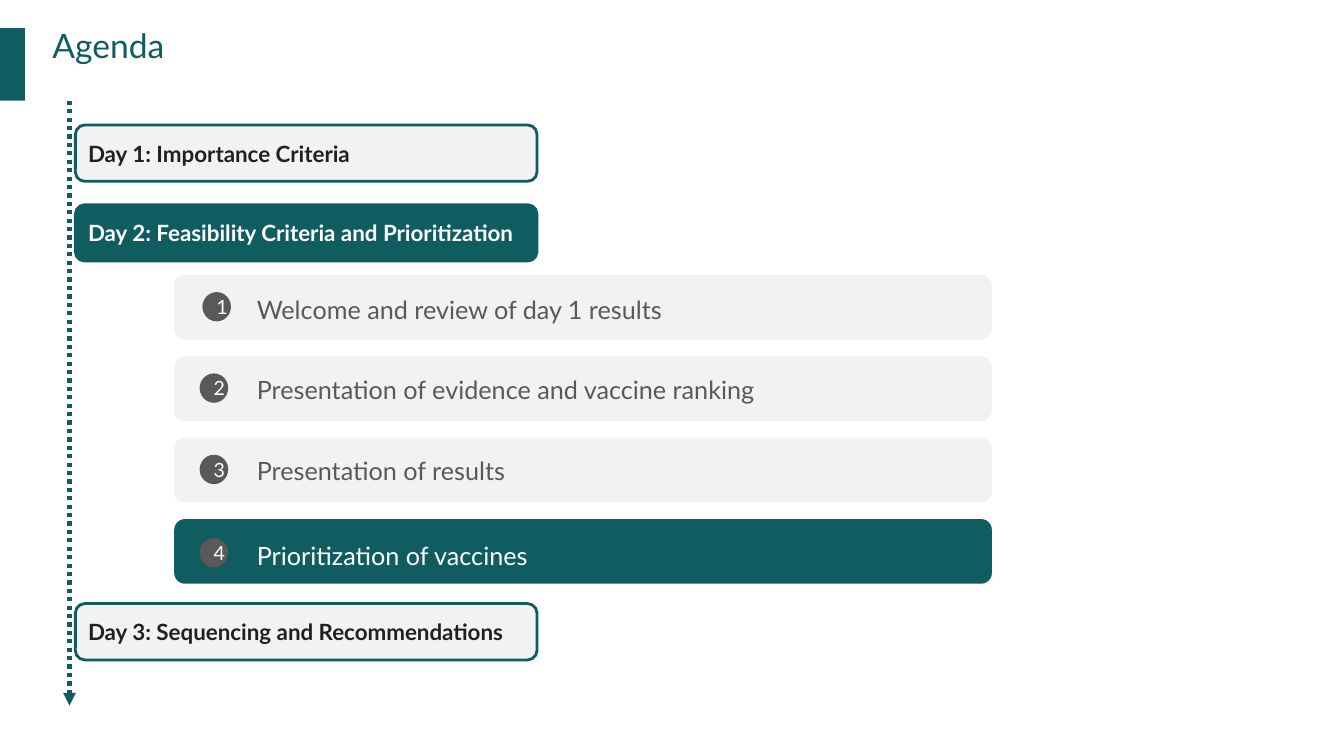
from dataclasses import dataclass

from lxml.etree import SubElement
from pptx import Presentation
from pptx.dml.color import RGBColor
from pptx.enum.dml import MSO_LINE
from pptx.enum.shapes import MSO_CONNECTOR, MSO_SHAPE
from pptx.enum.text import MSO_ANCHOR, MSO_AUTO_SIZE, PP_ALIGN
from pptx.oxml.ns import qn
from pptx.util import Cm, Pt


@dataclass(frozen=True)
class Theme:
    font: str = "Lato"
    teal: str = "0F5D61"
    pale: str = "F2F2F2"
    gray: str = "595959"
    dark: str = "202020"
    white: str = "FFFFFF"
    title_size: int = 24
    topic_size: int = 18
    day_size: int = 16
    badge_size: int = 14
    outline: int = 2
    timeline: int = 3


@dataclass(frozen=True)
class Box:
    left: float
    top: float
    width: float
    height: float

    def inside(self, left, top, width, height):
        return Box(self.left + left, self.top + top, width, height)

    def lengths(self):
        return Cm(self.left), Cm(self.top), Cm(self.width), Cm(self.height)


@dataclass(frozen=True)
class Topic:
    text: str
    badge_left: float = 0.64
    badge_top: float = 0.43
    label_top: float = 0.33
    active: bool = False


THEME = Theme()
PAGE = Box(0, 0, 33.86, 19.05)
DAY_AREA = Box(1.9, 3.15, 11.63, 1.42)
TOPIC_AREA = Box(4.39, 6.93, 20.6, 1.63)
TOPIC_PITCH = 2.05

DAYS = [
    ("Day 1: Importance Criteria", 0, False),
    ("Day 2: Feasibility Criteria and Prioritization", 2.01, True),
    ("Day 3: Sequencing and Recommendations", 12.06, False),
]
TOPICS = [
    Topic("Welcome and review of day 1 results", badge_left=0.71, label_top=0.36),
    Topic("Presentation of evidence and vaccine ranking"),
    Topic("Presentation of results"),
    Topic("Prioritization of vaccines", badge_top=0.48, label_top=0.41, active=True),
]


def write(shape, text, size, color, bold=False, align=PP_ALIGN.LEFT,
          anchor=MSO_ANCHOR.TOP, inset=None):
    frame = shape.text_frame
    frame.word_wrap = True
    frame.vertical_anchor = anchor
    if inset is not None:
        frame.margin_left = frame.margin_right = Cm(inset)
        frame.margin_top = frame.margin_bottom = Cm(inset)
    para = frame.paragraphs[0]
    para.alignment = align
    span = para.add_run()
    span.text = text
    span.font.name = THEME.font
    span.font.size = Pt(size)
    span.font.bold = bold
    span.font.color.rgb = RGBColor.from_string(color)


def add_panel(shapes, kind, box, fill, line=None):
    panel = shapes.add_shape(kind, *box.lengths())
    panel.shadow.inherit = False
    panel.fill.solid()
    panel.fill.fore_color.rgb = RGBColor.from_string(fill)
    if line:
        panel.line.color.rgb = RGBColor.from_string(line)
        panel.line.width = Pt(THEME.outline)
    else:
        panel.line.fill.background()
    return panel


def draw_header(page, box):
    add_panel(page.shapes, MSO_SHAPE.RECTANGLE,
              box.inside(-0.03, 0.71, 0.66, 1.83), THEME.teal)
    title = page.shapes.add_textbox(*box.inside(1.32, 0.64, 31.88, 2.03).lengths())
    write(title, "Agenda", THEME.title_size, THEME.teal, inset=0)


def draw_timeline(page, box):
    left, top = Cm(box.left), Cm(box.top)
    arrow = page.shapes.add_connector(
        MSO_CONNECTOR.STRAIGHT, left, top, left, top + Cm(box.height))
    arrow.line.color.rgb = RGBColor.from_string(THEME.teal)
    arrow.line.width = Pt(THEME.timeline)
    arrow.line.dash_style = MSO_LINE.ROUND_DOT
    properties = arrow.line._get_or_add_ln()
    SubElement(properties, qn("a:tailEnd"), type="triangle")
    SubElement(properties.getparent(), qn("a:effectLst"))


def draw_day(page, box, text, active):
    fill, color = (THEME.teal, THEME.white) if active else (THEME.pale, THEME.dark)
    panel = add_panel(page.shapes, MSO_SHAPE.ROUNDED_RECTANGLE, box, fill, THEME.teal)
    write(panel, text, THEME.day_size, color, bold=True, anchor=MSO_ANCHOR.MIDDLE)


def draw_topic(page, box, number, topic):
    fill, color = (THEME.teal, THEME.white) if topic.active else (THEME.pale, THEME.gray)
    group = page.shapes.add_group_shape()
    add_panel(group.shapes, MSO_SHAPE.ROUNDED_RECTANGLE, box, fill)
    badge = add_panel(group.shapes, MSO_SHAPE.OVAL,
                      box.inside(topic.badge_left, topic.badge_top, 0.72, 0.74), THEME.gray)
    write(badge, str(number), THEME.badge_size, THEME.white,
          align=PP_ALIGN.CENTER, anchor=MSO_ANCHOR.MIDDLE)
    label = group.shapes.add_textbox(
        *box.inside(1.83, topic.label_top, 17.6, 1.02).lengths())
    write(label, topic.text, THEME.topic_size, color)
    label.text_frame.auto_size = MSO_AUTO_SIZE.SHAPE_TO_FIT_TEXT


def draw_agenda(page, box):
    draw_header(page, box)
    draw_timeline(page, box.inside(1.75, 2.54, 0, 15.24))
    for text, offset, active in DAYS:
        day_box = DAY_AREA.inside(0, offset, DAY_AREA.width, DAY_AREA.height)
        draw_day(page, day_box, text, active)
    for index, topic in enumerate(TOPICS):
        topic_box = TOPIC_AREA.inside(
            0, index * TOPIC_PITCH, TOPIC_AREA.width, TOPIC_AREA.height)
        draw_topic(page, topic_box, index + 1, topic)


def main():
    deck = Presentation()
    deck.slide_width = Cm(PAGE.width)
    deck.slide_height = Cm(PAGE.height)
    draw_agenda(deck.slides.add_slide(deck.slide_layouts[6]), PAGE)
    deck.save("out.pptx")


if __name__ == "__main__":
    main()
